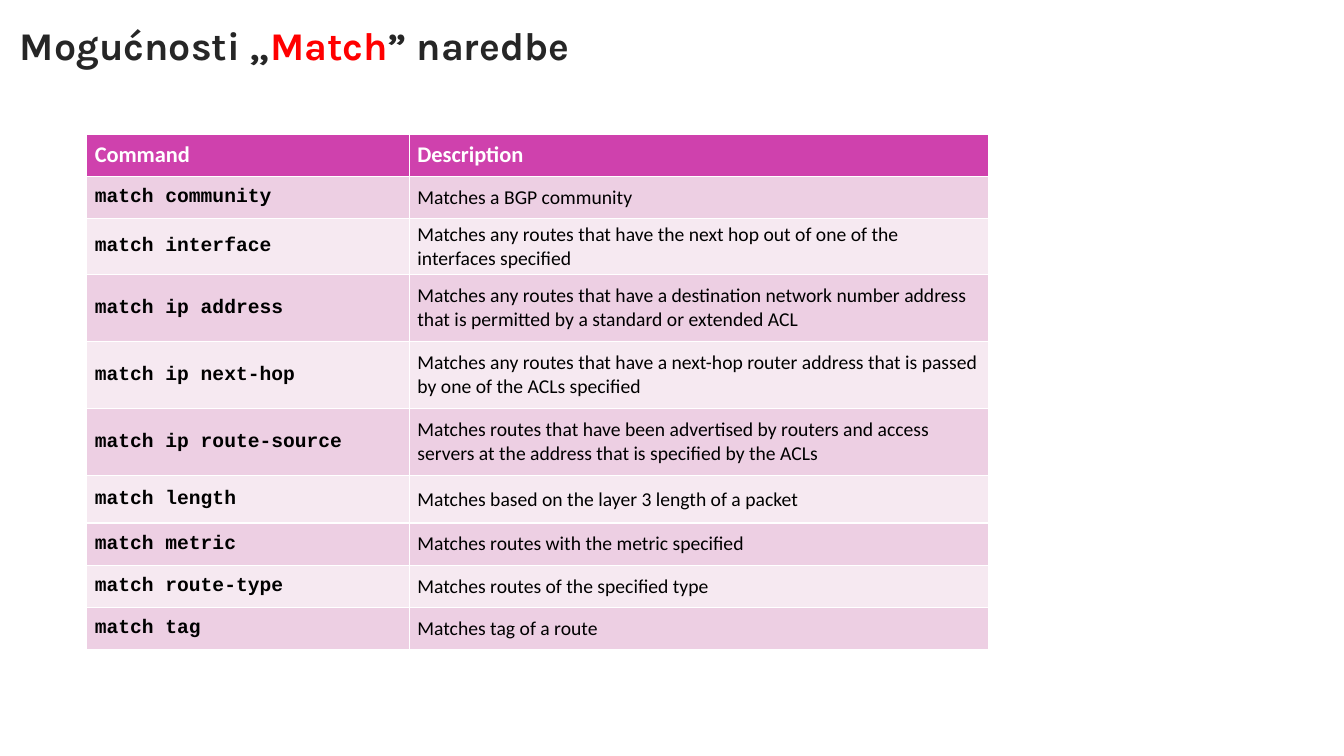
from lxml import etree
from pptx import Presentation
from pptx import util as u
from pptx.dml.color import RGBColor
from pptx.enum import text
from pptx.oxml import ns

COLORS = {
    "title": "262626", "accent": "FF0000", "header": "CF41AD",
    "odd": "EDCFE3", "even": "F6E9F1", "white": "FFFFFF", "black": "000000",
}
COLUMN_WIDTHS = [3.2, 5.75]
HEADINGS = ("Command", "Description")
# Command, description, row height
COMMANDS = [
    ("match community", "Matches a BGP community", 0.42),
    ("match interface", "Matches any routes that have the next hop out of one of the interfaces specified", 0.55),
    ("match ip address", "Matches any routes that have a destination network number address "
     "that is permitted by a standard or extended ACL", 0.67),
    ("match ip next-hop", "Matches any routes that have a next-hop router address that is passed "
     "by one of the ACLs specified", 0.66),
    ("match ip route-source", "Matches routes that have been advertised by routers and access servers "
     "at the address that is specified by the ACLs", 0.67),
    ("match length", "Matches based on the layer 3 length of a packet", 0.47),
    ("match metric", "Matches routes with the metric specified", 0.42),
    ("match route-type", "Matches routes of the specified type", 0.42),
    ("match tag", "Matches tag of a route", 0.42),
]


def set_font(font, name, size, color, bold):
    font.name, font.size, font.bold = name, u.Pt(size), bold
    font.color.rgb = RGBColor.from_string(COLORS[color])


def add_borders(cell):
    properties = cell._tc.get_or_add_tcPr()
    for side in ("L", "R", "T", "B"):
        line = etree.SubElement(properties, ns.qn(f"a:ln{side}"), w=str(u.Pt(1)))
        fill = etree.SubElement(line, ns.qn("a:solidFill"))
        etree.SubElement(fill, ns.qn("a:srgbClr"), val=COLORS["white"])


presentation = Presentation()
presentation.slide_width, presentation.slide_height = u.Inches(13.33), u.Inches(7.5)
slide = presentation.slides.add_slide(presentation.slide_layouts[6])

# Title
title = slide.shapes.add_textbox(u.Inches(0.1), u.Inches(0.12), u.Inches(10.47), u.Inches(0.71))
frame = title.text_frame
frame.word_wrap = True
frame.vertical_anchor = text.MSO_ANCHOR.MIDDLE
paragraph = frame.paragraphs[0]
paragraph.line_spacing = 0.9
for words, color in (("Mogućnosti „", "title"), ("Match", "accent"), ("” naredbe", "title")):
    run = paragraph.add_run()
    run.text = words
    set_font(run.font, "Karla", 28, color, True)

# Table of match commands
rows = [(*HEADINGS, 0.42)] + COMMANDS
table = slide.shapes.add_table(
    len(rows), len(COLUMN_WIDTHS), u.Inches(0.86), u.Inches(1.33),
    u.Inches(sum(COLUMN_WIDTHS)), u.Inches(sum(row[-1] for row in rows))).table
for column, width in zip(table.columns, COLUMN_WIDTHS):
    column.width = u.Inches(width)

for r, (command, description, height) in enumerate(rows):
    table.rows[r].height = u.Inches(height)
    is_header = r == 0
    band = "header" if is_header else "odd" if r % 2 else "even"
    for c, words in enumerate((command, description)):
        cell = table.cell(r, c)
        cell.text = words
        cell.vertical_anchor = text.MSO_ANCHOR.MIDDLE
        cell.margin_left = cell.margin_right = u.Inches(0.08)
        cell.margin_top = cell.margin_bottom = u.Inches(0.04)
        add_borders(cell)
        cell.fill.solid()
        cell.fill.fore_color.rgb = RGBColor.from_string(COLORS[band])
        paragraph = cell.text_frame.paragraphs[0]
        paragraph.space_after = u.Pt(6)
        if is_header:
            set_font(paragraph.font, "Calibri", 16, "white", True)
        else:
            set_font(paragraph.font, ("Courier New", "Calibri")[c], 14, "black", c == 0)

presentation.save("out.pptx")
